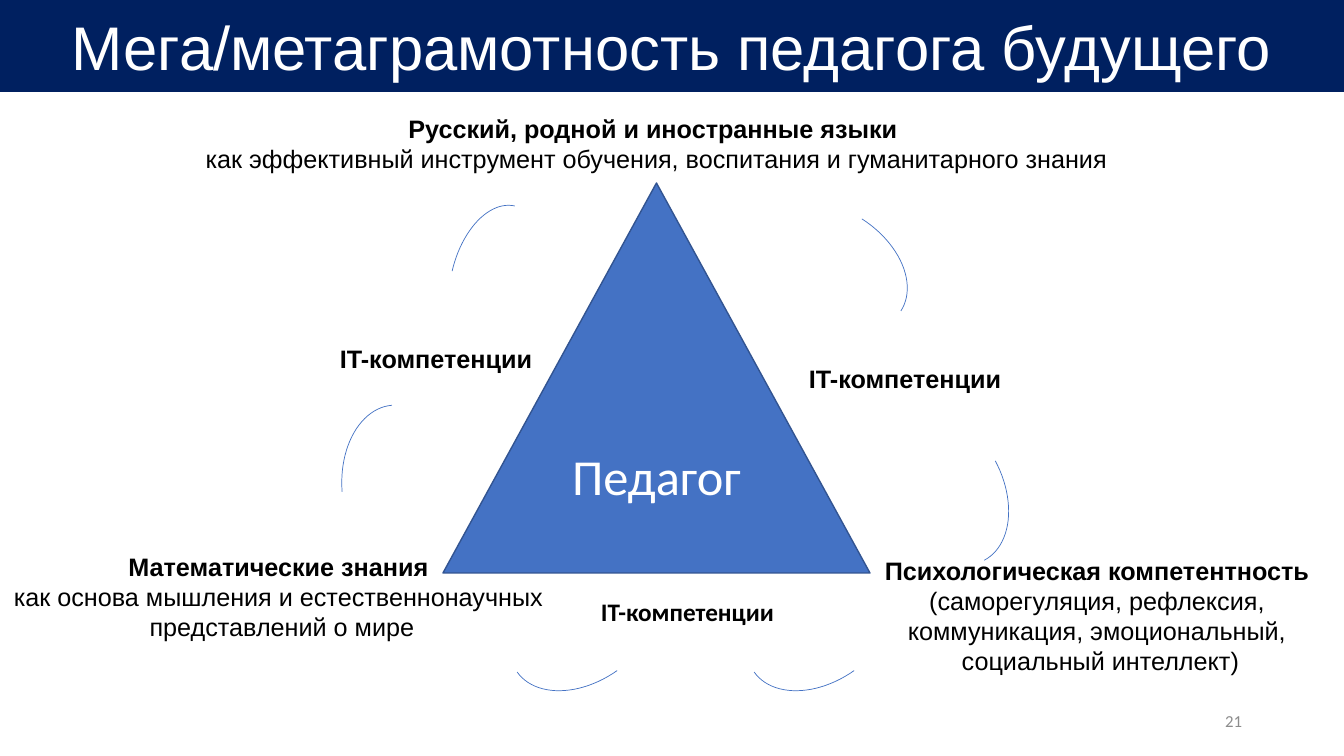
from dataclasses import dataclass

from lxml import etree
from pptx import Presentation
from pptx import util as u
from pptx.dml.color import RGBColor
from pptx.enum import shapes, text

# Content: positions are px (left, top, width, height)
SLIDE = (1344, 756)
TITLE = ("Мега/метаграмотность педагога будущего", (0, 0, 1344, 92))
CENTRE = ("Педагог", (443, 183, 427, 390))
PAGE = ("21", (950, 701, 302, 40))

# Bold heading first, then plain lines; last item tells whether the box wraps
CORNERS = [
    (["Русский, родной и иностранные языки ",
      "как эффективный инструмент обучения, воспитания и гуманитарного знания"],
     (191, 108, 931, 99), False),
    (["Математические знания ",
      "как основа мышления и естественнонаучных ",
      "представлений о мире"],
     (-54, 546, 672, 102), True),
    (["Психологическая компетентность ",
      "(саморегуляция, рефлексия, ",
      "коммуникация, эмоциональный, ",
      "социальный интеллект)"],
     (857, 550, 487, 159), True),
]

SIDE_LABEL = "IT-компетенции"
SIDES = [
    ((591, 591, 195, 40), "Calibri"),
    ((799, 358, 215, 40), "Arial"),
    ((330, 338, 215, 40), "Arial"),
]

ARCS = [  # box, rotation in degrees
    ((739, 568, 165, 113), 144.8),
    ((502, 568, 165, 113), 144.8),
    ((863, 431, 165, 113), 61.9),
    ((749, 210, 165, 113), 32.6),
    ((316, 431, 165, 113), 265.5),
    ((420, 235, 155, 93), 282.9),
]


@dataclass(frozen=True)
class Theme:
    navy: str = "002060"
    blue: str = "4472C4"
    outline: str = "325491"
    white: str = "FFFFFF"
    black: str = "000000"
    grey: str = "8C8C8C"
    heading_font: str = "Arial"
    body_font: str = "Calibri"
    title: int = 44
    centre: int = 36
    label: int = 18
    page: int = 12


T = Theme()
SHAPE, ALIGN, ANCHOR = shapes.MSO_SHAPE, text.PP_ALIGN, text.MSO_ANCHOR
PX = u.Inches(1) / 100.8


def emu(box):
    return [round(v * PX) for v in box]


def rgb(value):
    return RGBColor.from_string(value)


def write(sp, lines, size, font, color, align=ALIGN.CENTER,
          anchor=ANCHOR.MIDDLE, wrap=True, bold_first=False):
    tf = sp.text_frame
    tf.word_wrap = wrap
    tf.vertical_anchor = anchor
    tf.text = "\n".join(lines)
    for i, p in enumerate(tf.paragraphs):
        p.alignment = align
        for r in p.runs:
            r.font.size = u.Pt(size)
            r.font.name = font
            r.font.bold = bold_first and i == 0
            r.font.color.rgb = rgb(color)


def add_shape(slide, kind, box, fill=None, line=None, width=1):
    sp = slide.shapes.add_shape(kind, *emu(box))
    sp.shadow.inherit = False
    if fill:
        sp.fill.solid()
        sp.fill.fore_color.rgb = rgb(fill)
    else:
        sp.fill.background()
    if line:
        sp.line.color.rgb = rgb(line)
        sp.line.width = u.Pt(width)
    else:
        sp.line.fill.background()
    return sp


def add_label(slide, lines, box, font, align, wrap):
    """Add a top-anchored box that grows with its text, heading in bold."""
    sp = slide.shapes.add_textbox(*emu(box))
    write(sp, lines, T.label, font, T.black, align, ANCHOR.TOP, wrap, True)
    sp.text_frame.auto_size = text.MSO_AUTO_SIZE.SHAPE_TO_FIT_TEXT


def main():
    prs = Presentation()
    prs.slide_width, prs.slide_height = emu(SLIDE)
    slide = prs.slides.add_slide(prs.slide_layouts[6])

    title, box = TITLE
    sp = add_shape(slide, SHAPE.RECTANGLE, box, T.navy)
    write(sp, [title], T.title, T.heading_font, T.white)

    centre, box = CENTRE
    sp = add_shape(slide, SHAPE.ISOSCELES_TRIANGLE, box, T.blue, T.outline)
    write(sp, [centre], T.centre, T.body_font, T.white)

    for lines, box, wrap in CORNERS:
        add_label(slide, lines, box, T.heading_font, ALIGN.CENTER, wrap)
    for box, font in SIDES:
        add_label(slide, [SIDE_LABEL], box, font, ALIGN.LEFT, False)
    for box, angle in ARCS:
        sp = add_shape(slide, SHAPE.ARC, box, line=T.blue, width=0.5)
        sp.rotation = angle

    page, box = PAGE
    sp = slide.shapes.add_textbox(*emu(box))
    write(sp, [page], T.page, T.body_font, T.grey, ALIGN.RIGHT)

    prs.save("out.pptx")


if __name__ == "__main__":
    main()
